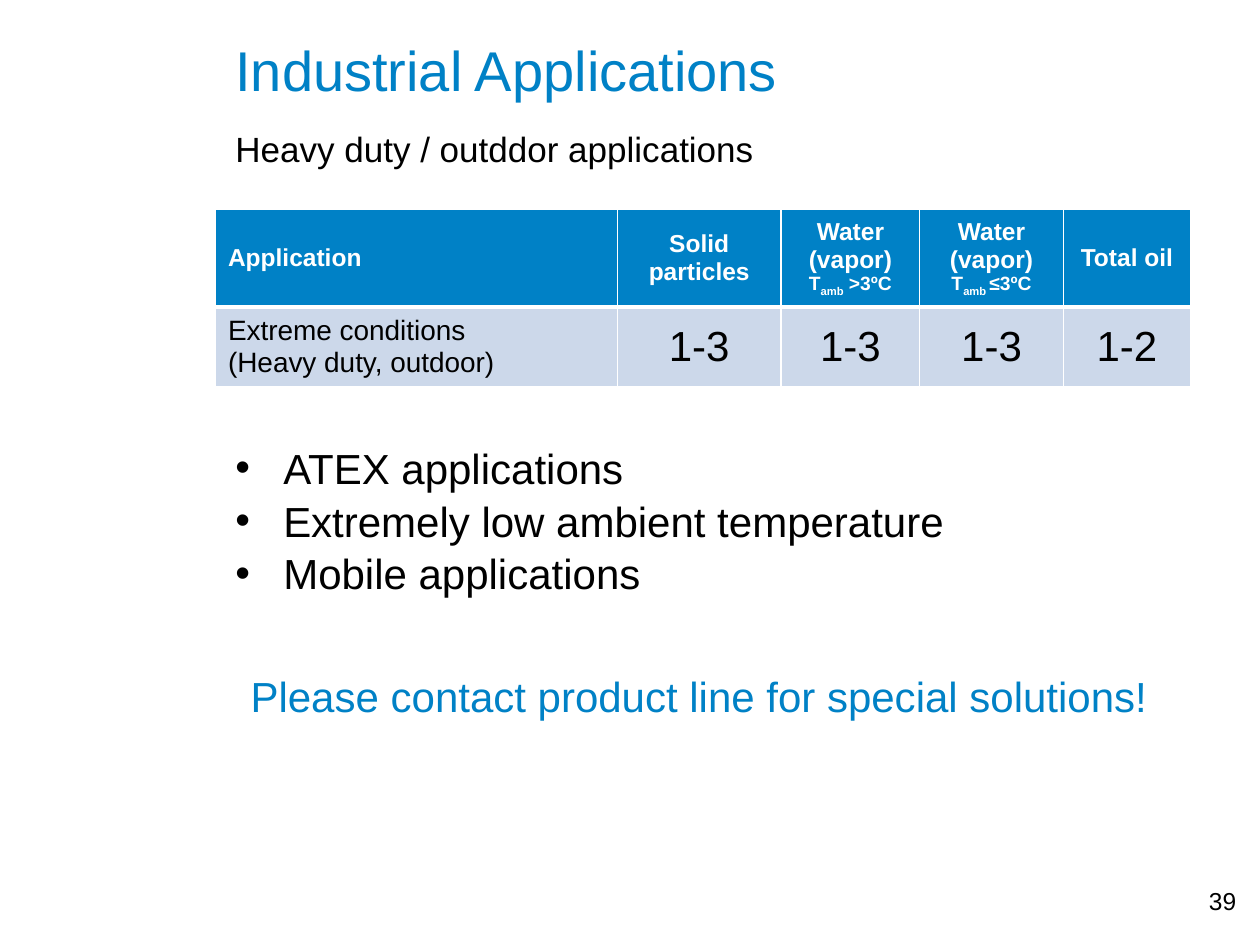
from dataclasses import dataclass

from pptx import Presentation
from pptx.dml.color import RGBColor
from pptx.enum.text import MSO_ANCHOR as Anchor, PP_ALIGN as Align
from pptx.oxml import parse_xml
from pptx.oxml.ns import nsdecls
from pptx.util import Inches, Pt

COLORS = {"blue": "0081C6", "pale": "CCD8EA", "white": "FFFFFF", "black": "000000"}
FONT = "Arial"
BULLET_INDENT = Inches(0.38)


@dataclass(frozen=True)
class Run:
    text: str
    size: float
    subscript: bool = False


@dataclass(frozen=True)
class TextBlock:
    box: tuple[float, float, float, float]
    lines: tuple[str, ...]
    size: float
    color: str = "black"
    align: Align = Align.LEFT
    anchor: Anchor = Anchor.TOP
    spacing: float = 1.0
    bullet: bool = False


@dataclass(frozen=True)
class Column:
    width: float
    heading: tuple
    value: tuple
    value_size: float = 24
    align: Align = Align.CENTER


def vapor_heading(*condition: Run) -> tuple:
    return ("Water (vapor)", condition)


BLOCKS = (
    TextBlock((1.77, 0.17, 7.48, 0.75), ("Industrial Applications",), 32, "blue", anchor=Anchor.MIDDLE),
    TextBlock((1.77, 0.95, 5.43, 0.44), ("Heavy duty / outddor applications",), 20, spacing=1.05),
    TextBlock((7.58, 6.98, 2.33, 0.52), ("39",), 14, align=Align.RIGHT),
    TextBlock(
        (1.77, 3.44, 7.44, 1.31),
        ("ATEX applications", "Extremely low ambient temperature", "Mobile applications"),
        24, spacing=1.05, bullet=True,
    ),
    TextBlock(
        (1.89, 5.25, 7.32, 0.5),
        ("Please contact product line for special solutions!",),
        24, "blue", spacing=1.05,
    ),
)
COLUMNS = (
    Column(3.19, ("Application",), ("Extreme conditions", "(Heavy duty, outdoor)"), 16, Align.LEFT),
    Column(1.3, ("Solid particles",), ("1-3",)),
    Column(1.1, vapor_heading(Run("T", 11), Run("amb", 11, True), Run(" >3ºC", 11)), ("1-3",)),
    Column(1.14, vapor_heading(Run("T", 11), Run("amb ", 11, True), Run("≤3ºC", 11)), ("1-3",)),
    Column(1.01, ("Total oil",), ("1-2",)),
)
ROW_HEIGHTS = (0.77, 0.62)


def rgb(name: str) -> RGBColor:
    return RGBColor.from_string(COLORS[name])


def write_text(frame, lines: tuple, *, size: float, color: str = "black", bold: bool = False,
               align: Align = Align.LEFT, spacing: float = 1.0, bullet: bool = False) -> None:
    for index, line in enumerate(lines):
        paragraph = frame.paragraphs[0] if index == 0 else frame.add_paragraph()
        paragraph.alignment = align
        paragraph.line_spacing = spacing
        if bullet:
            properties = paragraph._p.get_or_add_pPr()
            properties.set("marL", str(BULLET_INDENT))
            properties.set("indent", str(-BULLET_INDENT))
            properties.append(parse_xml(f'<a:buFont {nsdecls("a")} typeface="{FONT}"/>'))
            properties.append(parse_xml(f'<a:buChar {nsdecls("a")} char="•"/>'))
        for part in (Run(line, size),) if isinstance(line, str) else line:
            run = paragraph.add_run()
            run.text = part.text
            font = run.font
            font.name, font.size, font.bold = FONT, Pt(part.size), bold
            font.color.rgb = rgb(color)
            if part.subscript:
                run._r.get_or_add_rPr().set("baseline", "-25000")


def draw_block(slide, block: TextBlock) -> None:
    shape = slide.shapes.add_textbox(*map(Inches, block.box))
    frame = shape.text_frame
    frame.word_wrap = True
    frame.vertical_anchor = block.anchor
    write_text(frame, block.lines, size=block.size, color=block.color, align=block.align,
               spacing=block.spacing, bullet=block.bullet)


def format_cell(cell, fill: str, borders: dict[str, float]) -> None:
    cell.vertical_anchor = Anchor.MIDDLE
    properties = cell._tc.get_or_add_tcPr()
    for side, width in borders.items():
        properties.append(parse_xml(
            f'<a:ln{side} {nsdecls("a")} w="{Pt(width)}"><a:solidFill>'
            f'<a:srgbClr val="{COLORS["white"]}"/></a:solidFill></a:ln{side}>'
        ))
    cell.fill.solid()
    cell.fill.fore_color.rgb = rgb(fill)


def draw_table(slide, columns: tuple[Column, ...]) -> None:
    width = sum(column.width for column in columns)
    table = slide.shapes.add_table(
        len(ROW_HEIGHTS), len(columns), Inches(1.71), Inches(1.66),
        Inches(width), Inches(sum(ROW_HEIGHTS)),
    ).table
    for row, height in zip(table.rows, ROW_HEIGHTS):
        row.height = Inches(height)
    for index, column in enumerate(columns):
        table.columns[index].width = Inches(column.width)
        heading, value = table.cell(0, index), table.cell(1, index)
        format_cell(heading, "blue", {"L": 1, "R": 1, "T": 1, "B": 3})
        format_cell(value, "pale", {"L": 1, "R": 1, "T": 3, "B": 1})
        write_text(heading.text_frame, column.heading, size=14, color="white", bold=True, align=column.align)
        write_text(value.text_frame, column.value, size=column.value_size, align=column.align)


def main() -> None:
    """Build the industrial applications slide."""
    presentation = Presentation()
    presentation.slide_width, presentation.slide_height = Inches(10), Inches(7.5)
    slide = presentation.slides.add_slide(presentation.slide_layouts[6])
    for block in BLOCKS:
        draw_block(slide, block)
    draw_table(slide, COLUMNS)
    presentation.save("out.pptx")


if __name__ == "__main__":
    main()
